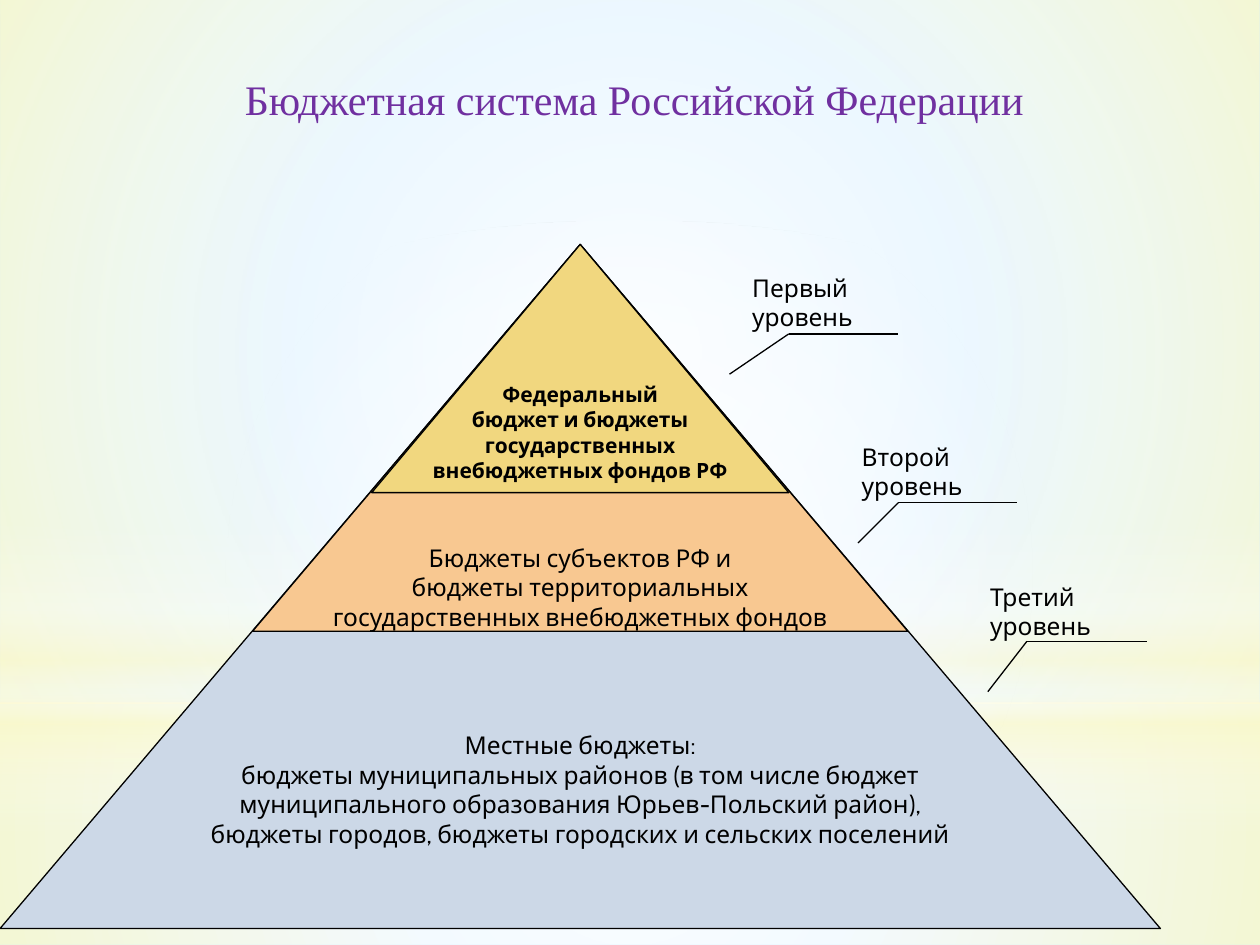
from lxml import etree
from pptx import Presentation
from pptx.dml.color import RGBColor
from pptx.enum.shapes import MSO_CONNECTOR, MSO_SHAPE
from pptx.enum.text import MSO_ANCHOR, PP_ALIGN
from pptx.oxml import parse_xml
from pptx.oxml.ns import nsdecls, qn
from pptx.util import Inches, Pt

RECT, OVAL = MSO_SHAPE.RECTANGLE, MSO_SHAPE.OVAL
TRIANGLE = MSO_SHAPE.ISOSCELES_TRIANGLE
STRAIGHT = MSO_CONNECTOR.STRAIGHT
MIDDLE, BOTTOM = MSO_ANCHOR.MIDDLE, MSO_ANCHOR.BOTTOM
LEFT, CENTER = PP_ALIGN.LEFT, PP_ALIGN.CENTER

RADIAL = ('<a:path path="circle"><a:fillToRect l="50000" t="50000" '
          'r="50000" b="50000"/></a:path>')
DOWNWARD = '<a:lin ang="5400000" scaled="0"/>'


def rgb(value):
    return RGBColor.from_string(value)


def write(tf, *lines, font="Cabin", size=14, color="000000", bold=False,
          align=LEFT, anchor=MIDDLE, wrap=True):
    tf.word_wrap = wrap
    tf.vertical_anchor = anchor
    for i, line in enumerate(lines):
        p = tf.add_paragraph() if i else tf.paragraphs[0]
        p.alignment = align
        r = p.add_run()
        r.text = line
        r.font.name, r.font.size, r.font.bold = font, Pt(size), bold
        r.font.color.rgb = rgb(color)


class PyramidSlide:
    ink = "000000"
    line_width = Pt(0.75)
    center, apex = 4.605, 1.94

    def __init__(self, prs, background):
        self.s = prs.slides.add_slide(prs.slide_layouts[5])
        self.shapes = self.s.shapes
        fill = self.s.background.fill
        fill.solid()
        fill.fore_color.rgb = rgb(background)

    def glow(self, kind, box, stops, direction=RADIAL):
        """Add a borderless gradient; stops are (position, colour, opacity) in percent."""
        sp = self.shapes.add_shape(kind, *map(Inches, box))
        sp.shadow.inherit = False
        sp.line.fill.background()
        sp.fill.background()
        marks = "".join(
            f'<a:gs pos="{pos * 1000}"><a:srgbClr val="{color}">'
            f'<a:alpha val="{alpha * 1000}"/></a:srgbClr></a:gs>'
            for pos, color, alpha in stops)
        grad = parse_xml(f'<a:gradFill {nsdecls("a")} rotWithShape="1">'
                         f'<a:gsLst>{marks}</a:gsLst>{direction}</a:gradFill>')
        spPr = sp._element.spPr
        spPr.replace(spPr.find(qn("a:noFill")), grad)

    def title(self, text, box, **style):
        sp = self.shapes.title
        sp.left, sp.top, sp.width, sp.height = map(Inches, box)
        write(sp.text_frame, text, align=CENTER, **style)
        self.shapes._spTree.append(sp._element)  # in front of the glows

    def tier(self, width, height, color, gap, *lines, **style):
        """Add a triangle under the common apex, its text gap inches above the base."""
        sp = self.shapes.add_shape(
            TRIANGLE, Inches(self.center - width / 2), Inches(self.apex),
            Inches(width), Inches(height))
        sp.shadow.inherit = False
        sp.fill.solid()
        sp.fill.fore_color.rgb = rgb(color)
        sp.line.color.rgb = rgb(self.ink)
        sp.line.width = self.line_width
        sp.text_frame.margin_bottom = Inches(gap)
        write(sp.text_frame, *lines, align=CENTER, anchor=BOTTOM, wrap=False,
              **style)

    def line(self, start, end):
        cx = self.shapes.add_connector(STRAIGHT, *map(Inches, start + end))
        cx.line.color.rgb = rgb(self.ink)
        cx.line.width = self.line_width
        etree.SubElement(cx._element.spPr, qn("a:effectLst"))

    def label(self, text, box, tip, elbow, right):
        """Add a text underlined by a leader that bends down to tip."""
        self.line(tip, elbow)
        self.line(elbow, (right, elbow[1]))
        sp = self.shapes.add_textbox(*map(Inches, box))
        write(sp.text_frame, text)


def main():
    prs = Presentation()
    prs.slide_width, prs.slide_height = Inches(10), Inches(7.5)
    white, cream = "FFFFFF", "FEFAC9"

    slide = PyramidSlide(prs, "CCECFF")
    slide.glow(RECT, (0, 5.58, 10, 1.92),
               [(0, white, 91), (37, white, 76), (100, cream, 79)])
    slide.glow(RECT, (0, 0, 10, 5.58),
               [(0, white, 89), (48, white, 62), (100, cream, 79)])
    slide.glow(RECT, (0, 4.12, 10, 2.5),
               [(0, white, 0), (29, white, 30), (45, cream, 40),
                (55, white, 26), (65, cream, 60), (100, white, 0)], DOWNWARD)
    slide.glow(OVAL, (0, 1.75, 10, 5.58), [(0, white, 100), (56, white, 0)])

    slide.title("Бюджетная система Российской Федерации",
                (1.61, 0.39, 6.85, 0.79),
                font="Times New Roman", size=24, color="7030A0")

    slide.tier(9.21, 5.43, "CCD8E7", 0.64,
               "Местные бюджеты:",
               "бюджеты муниципальных районов (в том числе бюджет",
               "муниципального образования Юрьев-Польский район),",
               "бюджеты городов, бюджеты городских и сельских поселений")
    slide.tier(5.2, 3.07, "F8C891", 0,
               "Бюджеты субъектов РФ и",
               "бюджеты территориальных",
               "государственных внебюджетных фондов")
    slide.tier(3.31, 1.97, "F1D77F", 0.08,
               "Федеральный",
               "бюджет и бюджеты",
               "государственных",
               "внебюджетных фондов РФ", size=12, bold=True)

    slide.label("Первый уровень", (5.87, 2.23, 1.69, 0.34),
                (5.79, 2.97), (6.26, 2.65), 7.13)
    slide.label("Второй уровень", (6.74, 3.57, 1.62, 0.34),
                (6.81, 4.31), (7.13, 3.99), 8.07)
    slide.label("Третий уровень", (7.76, 4.68, 1.63, 0.34),
                (7.84, 5.49), (8.15, 5.09), 9.1)

    prs.save("out.pptx")


if __name__ == "__main__":
    main()
